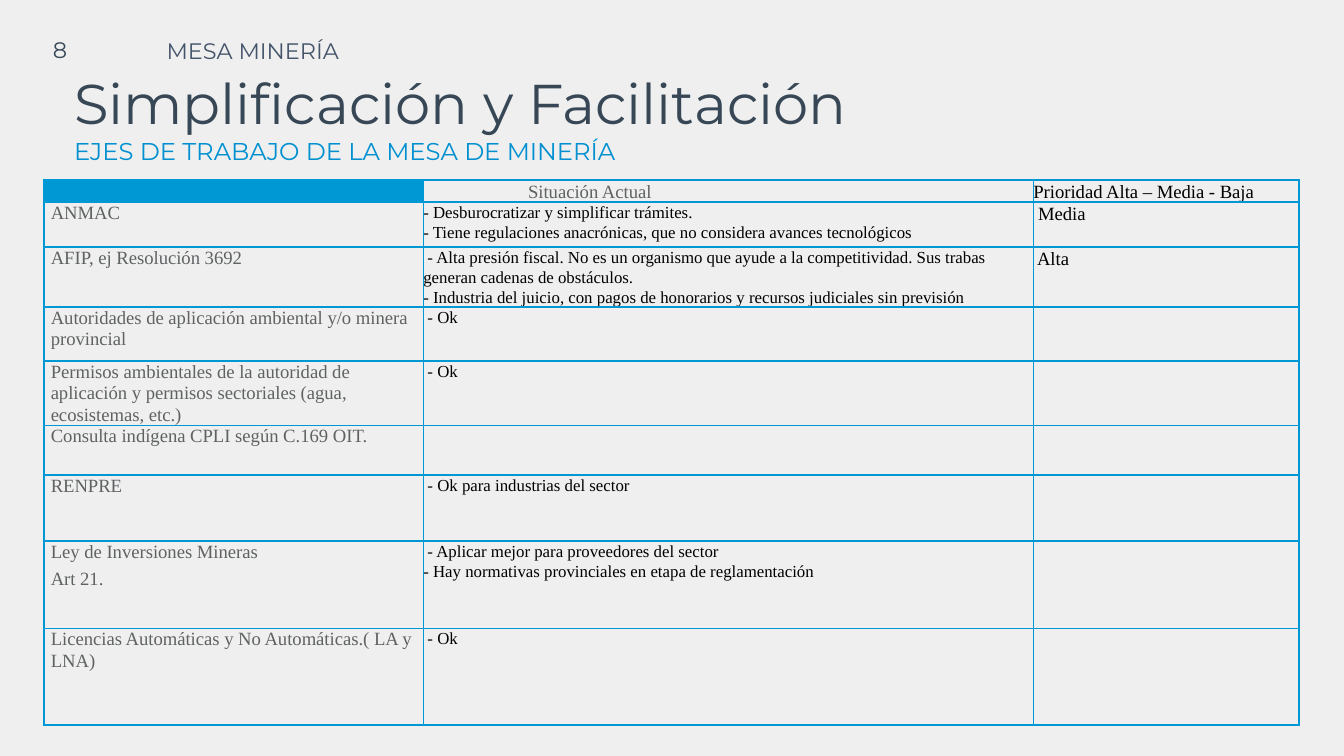
from lxml.etree import SubElement
from pptx import Presentation
from pptx.dml.color import RGBColor
from pptx.enum.text import MSO_ANCHOR as Anchor, MSO_AUTO_SIZE as Auto, PP_ALIGN as Align
from pptx.oxml import parse_xml
from pptx.oxml.ns import nsdecls, qn
from pptx.util import Cm, Pt

SANS, SERIF = "Montserrat", "Times New Roman"
NAVY, SLATE, AZURE = "374756", "44546A", "0090D0"
BLUE, GRAY, BLACK, PAPER = "0097D5", "5F6263", "000000", "EFEFEF"

HEAD = ["", "Situación Actual", "Prioridad Alta – Media - Baja"]
# Row height in cm, topic lines, situation lines, priority
ROWS = [
    (0.85, ["ANMAC"],
     ["- Desburocratizar y simplificar trámites.",
      "- Tiene regulaciones anacrónicas, que no considera avances tecnológicos"], " Media"),
    (1.12, ["AFIP, ej Resolución 3692"],
     [" - Alta presión fiscal. No es un organismo que ayude a la competitividad. "
      "Sus trabas generan cadenas de obstáculos.",
      "- Industria del juicio, con pagos de honorarios y recursos judiciales sin previsión"],
     " Alta"),
    (1.02, ["Autoridades de aplicación ambiental y/o minera provincial"], [" - Ok"], ""),
    (1.22, ["Permisos ambientales de la autoridad de aplicación y permisos sectoriales "
            "(agua, ecosistemas, etc.)"], [" - Ok"], ""),
    (0.93, ["Consulta indígena CPLI según C.169 OIT."], [""], ""),
    (1.25, ["RENPRE"], [" - Ok para industrias del sector"], ""),
    (1.65, ["Ley de Inversiones Mineras", "Art 21."],
     [" - Aplicar mejor para proveedores del sector",
      "- Hay normativas provinciales en etapa de reglamentación"], ""),
    (1.83, ["Licencias Automáticas y No Automáticas.( LA y LNA)"], [" - Ok"], ""),
]
COLS = [7.17, 11.53, 5.02]
HEAD_H = 0.42


def rgb(code):
    return RGBColor.from_string(code)


def style(para, face, size, color):
    font = para.font
    font.name, font.size, font.color.rgb = face, Pt(size), rgb(color)


def setup(shape, box, pad, lines, align=Align.LEFT, anchor=Anchor.TOP):
    """Place a text shape and fill it with (text, size, color) lines."""
    shape.left, shape.top, shape.width, shape.height = map(Cm, box)
    frame = shape.text_frame
    frame.word_wrap, frame.auto_size = True, Auto.NONE
    frame.vertical_anchor = anchor
    frame.margin_left = frame.margin_right = Cm(pad)
    frame.margin_top = frame.margin_bottom = Cm(pad)
    frame.text = "\n".join(text for text, _, _ in lines)
    for para, (_, size, color) in zip(frame.paragraphs, lines):
        para.alignment = align
        style(para, SANS, size, color)


def edge(cell):
    """Draw the four borders of a cell."""
    props = cell._tc.get_or_add_tcPr()
    for i, side in enumerate("LRTB"):
        props.insert(i, parse_xml(
            f'<a:ln{side} {nsdecls("a")} w="12700"><a:solidFill>'
            f'<a:srgbClr val="{BLUE}"/></a:solidFill></a:ln{side}>'))


def write(cell, lines, size, color, space, before=0, indent=0):
    cell.margin_left = cell.margin_right = cell.margin_top = cell.margin_bottom = 0
    cell.fill.background()
    edge(cell)
    cell.text = "\n".join(lines)
    for para in cell.text_frame.paragraphs:
        style(para, SERIF, size, color)
        para.line_spacing, para.space_before = space, Pt(before)
        if indent:
            para._p.get_or_add_pPr().set("marL", str(Cm(indent)))
        if not para.runs:
            SubElement(para._p, qn("a:endParaRPr"), sz=str(size * 100))


deck = Presentation()
deck.slide_width, deck.slide_height = Cm(25.4), Cm(14.28)
slide = deck.slides.add_slide(deck.slide_layouts[5])
slide.background.fill.solid()
slide.background.fill.fore_color.rgb = rgb(PAPER)

setup(slide.shapes.title, (1.27, 1.17, 16.08, 2.06), 0.13,
      [("Simplificación y Facilitación", 30, NAVY),
       ("EJES DE TRABAJO DE LA MESA DE MINERÍA", 13, AZURE)])
page = slide.shapes.add_textbox(0, 0, 0, 0)
setup(page, (0.48, 0.43, 1.04, 1), 0.25, [("8", 12, NAVY)], Align.RIGHT, Anchor.MIDDLE)
label = slide.shapes.add_textbox(0, 0, 0, 0)
setup(label, (3.02, 0.58, 8.38, 0.74), 0.13, [("MESA MINERÍA", 12, SLATE)])

heights = [HEAD_H] + [row[0] for row in ROWS]
table = slide.shapes.add_table(len(heights), len(COLS), Cm(0.83), Cm(3.4),
                               Cm(sum(COLS)), Cm(sum(heights))).table
table.first_row = table.horz_banding = False
for col, width in zip(table.columns, COLS):
    col.width = Cm(width)
for row, height in zip(table.rows, heights):
    row.height = Cm(height)

for c, (text, color, indent) in enumerate(zip(HEAD, (GRAY, GRAY, BLACK), (0, 1.98, 0))):
    write(table.cell(0, c), [text], 10, color, 1.07, 1.9, indent)
corner = table.cell(0, 0).fill
corner.solid()
corner.fore_color.rgb = rgb(BLUE)

for r, (_, topic, state, rank) in enumerate(ROWS, 1):
    write(table.cell(r, 0), topic, 10, GRAY, 1.04, 3, 0.13)
    write(table.cell(r, 1), state, 9, BLACK, 1.07)
    write(table.cell(r, 2), [rank], 10, BLACK, 1.07)

deck.save("out.pptx")
